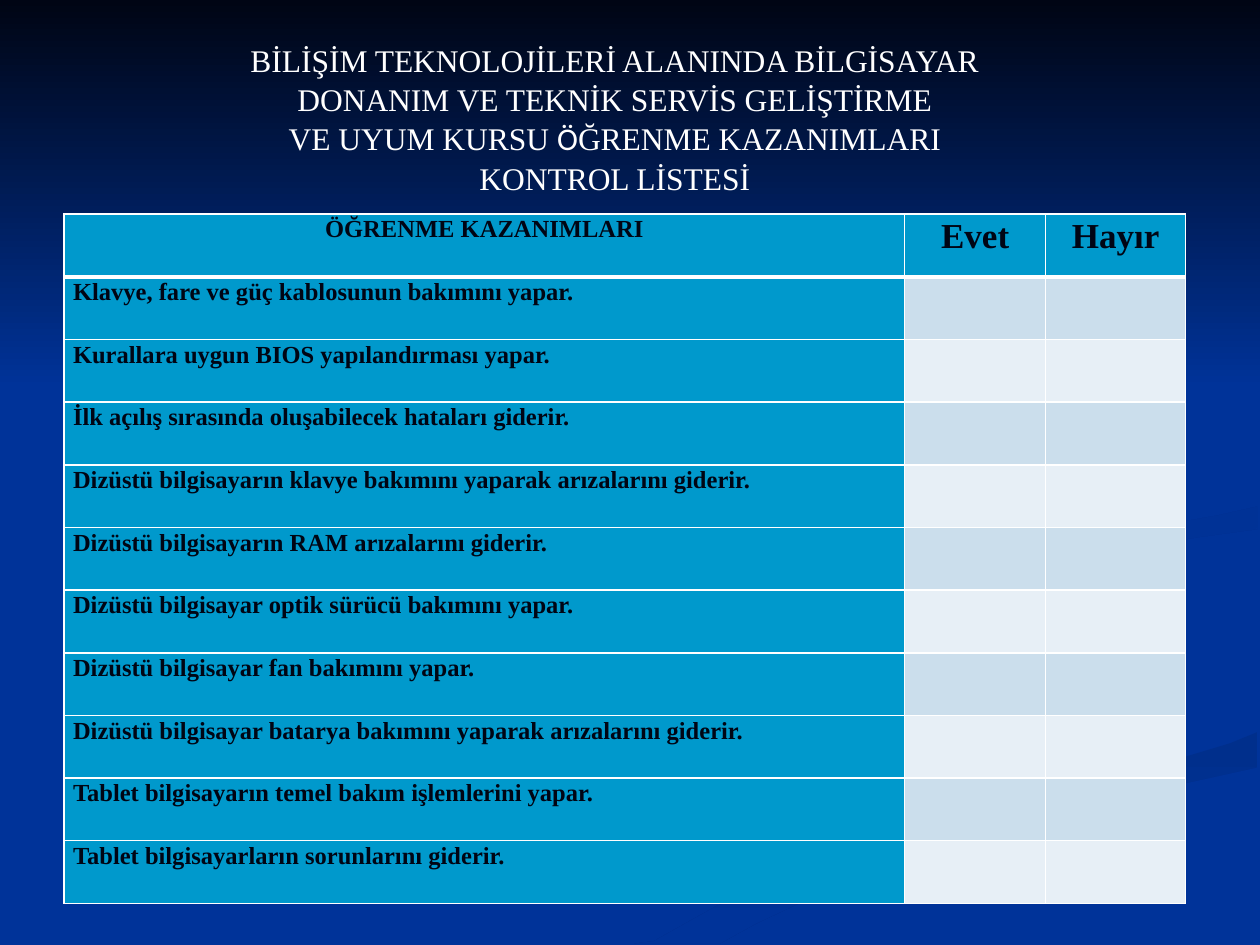
from lxml import etree
from pptx import Presentation, util as u
from pptx.dml.color import RGBColor
from pptx.enum import shapes, text
from pptx.oxml.ns import qn

HEX = {"base": "003399", "night": "000514", "wave": "002F8C", "curl": "003091",
       "cell": "0099CC", "odd": "CBDEEC", "even": "E7EFF6", "white": "FFFFFF"}
FONT = "Times New Roman"
TITLE = [
    ["BİLİŞİM TEKNOLOJİLERİ ALANINDA BİLGİSAYAR"],
    ["DONANIM VE TEKNİK SERVİS GELİŞTİRME"],
    ["VE UYUM KURSU ", ("Ö", "Calibri"), "ĞRENME KAZANIMLARI"],
    ["KONTROL LİSTESİ"],
]
HEADS = [("ÖĞRENME KAZANIMLARI", 14), ("Evet", 20), ("Hayır", 20)]
GOALS = [
    "Klavye, fare ve güç kablosunun bakımını yapar.",
    "Kurallara uygun BIOS yapılandırması yapar.",
    "İlk açılış sırasında oluşabilecek hataları giderir.",
    "Dizüstü bilgisayarın klavye bakımını yaparak arızalarını giderir.",
    "Dizüstü bilgisayarın RAM arızalarını giderir.",
    "Dizüstü bilgisayar optik sürücü bakımını yapar.",
    "Dizüstü bilgisayar fan bakımını yapar.",
    "Dizüstü bilgisayar batarya bakımını yaparak arızalarını giderir.",
    "Tablet bilgisayarın temel bakım işlemlerini yapar.",
    "Tablet bilgisayarların sorunlarını giderir.",
]
# Outlines of the background swirls, in inches
WAVE = [(5.03, 7.49), (5.71, 7.49), (6, 7.33), (6.49, 7.1), (6.95, 6.92),
        (7.52, 6.72), (8.21, 6.51), (9.03, 6.3), (9.98, 6.09), (9.98, 5.81),
        (9.76, 5.9), (9.36, 6.02), (8.67, 6.2), (7.97, 6.38), (7.64, 6.47),
        (6.96, 6.69), (6.3, 6.93), (5.69, 7.19), (5.19, 7.47)]
CURL = [(7.81, 4.6), (7.82, 4.69), (7.91, 4.78), (8.06, 4.87), (8.26, 4.96),
        (8.12, 4.87), (8.05, 4.76), (8.09, 4.66), (8.28, 4.53), (8.59, 4.43),
        (8.96, 4.35), (9.54, 4.26), (9.98, 4.2), (9.98, 4.02), (9.67, 4.09),
        (9.33, 4.15), (8.65, 4.24), (8.21, 4.34), (7.91, 4.47)]


def rgb(name):
    return RGBColor.from_string(HEX[name])


def write(para, words, size=14, font=FONT, color="night", bold=False,
          align=text.PP_ALIGN.LEFT, space=1.07):
    para.alignment = align
    para.line_spacing = space
    run = para.add_run()
    run.text = words
    run.font.size = u.Pt(size)
    run.font.name = font
    run.font.bold = bold
    run.font.color.rgb = rgb(color)


def shade(shape, first, last, angle):
    """Plain gradient without line or shadow."""
    shape.shadow.inherit = False
    shape.line.fill.background()
    shape.fill.gradient()
    shape.fill.gradient_angle = angle
    for stop, name, place in zip(shape.fill.gradient_stops, (first, last), (0, 1)):
        stop.color.rgb = rgb(name)
        stop.position = place


def swirl(slide, points, first, angle):
    spots = [(u.Inches(x), u.Inches(y)) for x, y in points]
    path = slide.shapes.build_freeform(*spots[0], scale=1.0)
    path.add_line_segments(spots[1:], close=True)
    shade(path.convert_to_shape(), first, "base", angle)


def backdrop(slide, width, height):
    slide.background.fill.solid()
    slide.background.fill.fore_color.rgb = rgb("base")
    swirl(slide, WAVE, "wave", 270)
    swirl(slide, CURL, "curl", 315)
    sky = slide.shapes.add_shape(shapes.MSO_SHAPE.RECTANGLE, 0, 0, width, height)
    shade(sky, "night", "base", 270)


def edge(cell, **widths):
    """White borders; widths in points by side."""
    props = cell._tc.get_or_add_tcPr()
    for spot, side in enumerate("LRTB"):
        line = etree.Element(qn("a:ln" + side), w=str(u.Pt(widths.get(side, 1))))
        fill = etree.SubElement(line, qn("a:solidFill"))
        etree.SubElement(fill, qn("a:srgbClr"), val=HEX["white"])
        props.insert(spot, line)


def checklist(slide, left, top, width, height):
    count = len(GOALS) + 1
    grid = slide.shapes.add_table(count, 3, left, top, width, height).table
    for col, size in zip(grid.columns, (6.67, 1.12, 1.11)):
        col.width = u.Inches(size)
    for r, row in enumerate(grid.rows):
        row.height = height // count
        for c, cell in enumerate(row.cells):
            tint = "cell" if r == 0 or c == 0 else "odd" if r % 2 else "even"
            cell.fill.solid()
            cell.fill.fore_color.rgb = rgb(tint)
            edge(cell, T=3 if r == 1 else 1, B=3 if r == 0 else 1)
            if tint != "cell":
                continue
            cell.margin_left = cell.margin_right = u.Inches(0.07)
            cell.margin_top = cell.margin_bottom = 0
            para = cell.text_frame.paragraphs[0]
            if r == 0:
                words, size = HEADS[c]
                write(para, words, size=size, bold=True, align=text.PP_ALIGN.CENTER)
            else:
                write(para, GOALS[r - 1], bold=True)


def heading(slide, left, top, width, height):
    title = slide.shapes.title
    title.left, title.top, title.width, title.height = left, top, width, height
    frame = title.text_frame
    frame.word_wrap = True
    frame.auto_size = text.MSO_AUTO_SIZE.NONE
    frame.vertical_anchor = text.MSO_ANCHOR.MIDDLE
    for n, parts in enumerate(TITLE):
        para = frame.add_paragraph() if n else frame.paragraphs[0]
        for part in parts:
            words, font = (part, FONT) if isinstance(part, str) else part
            write(para, words, size=18, font=font, color="white",
                  align=text.PP_ALIGN.CENTER, space=1.04)


def main():
    deck = Presentation()
    deck.slide_width, deck.slide_height = u.Inches(10), u.Inches(7.5)
    slide = deck.slides.add_slide(deck.slide_layouts[5])
    backdrop(slide, deck.slide_width, u.Inches(3.08))
    checklist(slide, u.Inches(0.51), u.Inches(1.7), u.Inches(8.9), u.Inches(5.47))
    heading(slide, u.Inches(0.35), u.Inches(0.28), u.Inches(9.06), u.Inches(1.31))
    # Keep the title in front of the backdrop
    slide.shapes._spTree.append(slide.shapes.title._element)
    deck.save("out.pptx")


if __name__ == "__main__":
    main()
